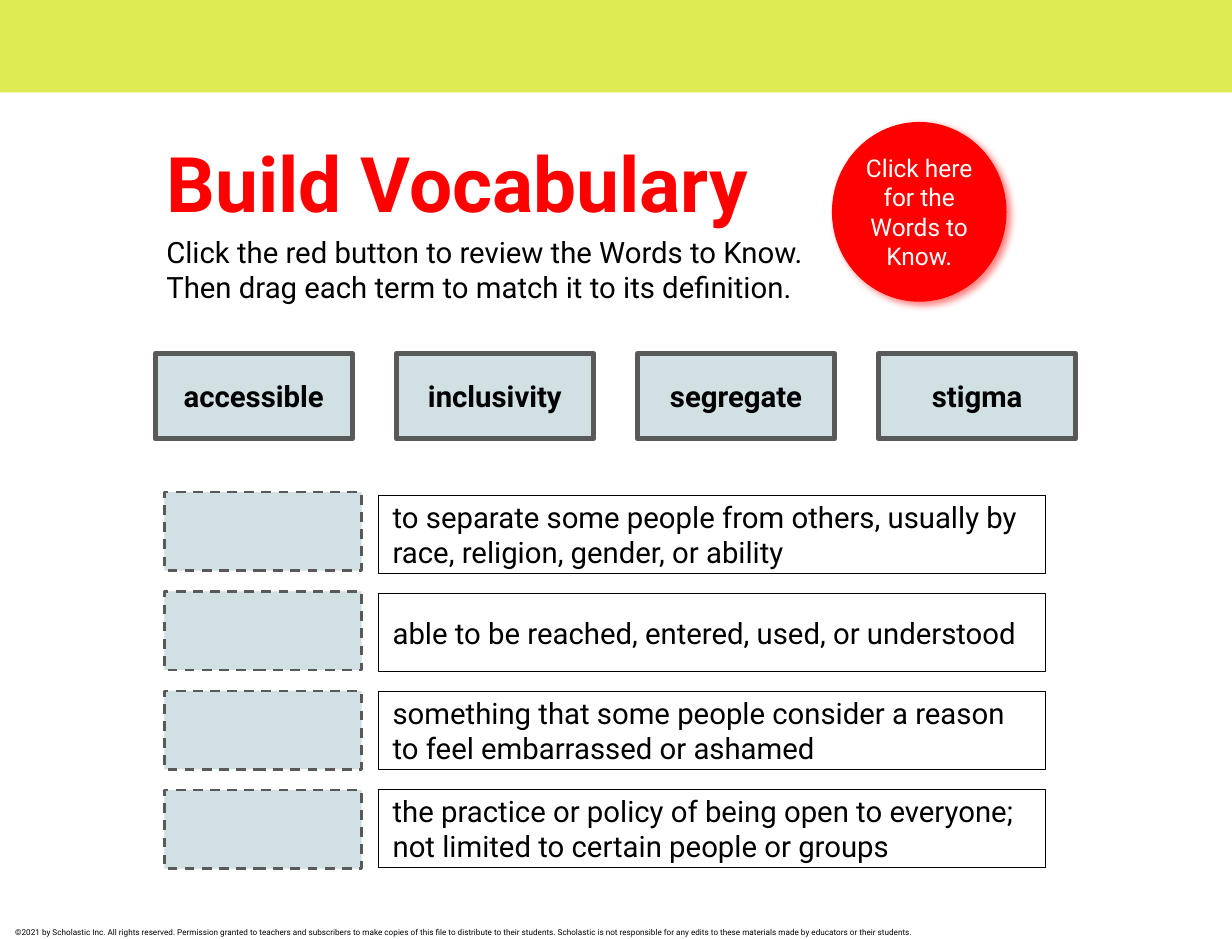
from lxml.etree import SubElement
from pptx import Presentation
from pptx.dml.color import RGBColor
from pptx.enum.dml import MSO_LINE
from pptx.enum.shapes import MSO_SHAPE
from pptx.enum.text import MSO_ANCHOR, MSO_AUTO_SIZE, PP_ALIGN
from pptx.oxml.ns import qn
from pptx.util import Cm, Pt

LIME = RGBColor(0xDE, 0xEB, 0x52)
RED = RGBColor(0xFF, 0x00, 0x00)
BLACK = RGBColor(0x00, 0x00, 0x00)
WHITE = RGBColor(0xFF, 0xFF, 0xFF)
PALE_BLUE = RGBColor(0xD0, 0xE0, 0xE3)
GRAY = RGBColor(0x59, 0x59, 0x59)
FONT = "Roboto"

TERMS = ["accessible", "inclusivity", "segregate", "stigma"]
DEFINITIONS = [
    "to separate some people from others, usually by race, religion, gender, or ability",
    "able to be reached, entered, used, or understood",
    "something that some people consider a reason to feel embarrassed or ashamed",
    "the practice or policy of being open to everyone; not limited to certain people or groups",
]
COPYRIGHT = (
    "©2021 by Scholastic Inc. All rights reserved. Permission granted to teachers "
    "and subscribers to make copies of this file to distribute to their students. "
    "Scholastic is not responsible for any edits to these materials made by "
    "educators or their students."
)


def set_text(sp, text, size, color=BLACK, bold=False, align=PP_ALIGN.LEFT,
             anchor=MSO_ANCHOR.MIDDLE, inset=0.3):
    tf = sp.text_frame
    tf.word_wrap = True
    tf.auto_size = MSO_AUTO_SIZE.NONE
    tf.vertical_anchor = anchor
    tf.margin_left = tf.margin_right = tf.margin_top = tf.margin_bottom = Cm(inset)
    p = tf.paragraphs[0]
    p.text = text
    p.alignment = align
    p.space_before = Pt(0)
    for r in p.runs:
        r.font.name = FONT
        r.font.size = Pt(size)
        r.font.bold = bold
        r.font.color.rgb = color
    return p


def place(sp, left, top, width, height):
    sp.left, sp.top, sp.width, sp.height = Cm(left), Cm(top), Cm(width), Cm(height)


def add_box(s, left, top, width, height, fill=None, line=None, weight=1,
            dash=None, kind=MSO_SHAPE.RECTANGLE):
    sp = s.shapes.add_shape(kind, Cm(left), Cm(top), Cm(width), Cm(height))
    sp.shadow.inherit = False
    if fill is None:
        sp.fill.background()
    else:
        sp.fill.solid()
        sp.fill.fore_color.rgb = fill
    if line is None:
        sp.line.fill.background()
    else:
        sp.line.color.rgb = line
        sp.line.width = Pt(weight)
        if dash:
            sp.line.dash_style = dash
    return sp


def add_glow_shadow(sp, color):
    effects = sp._element.spPr.find(qn("a:effectLst"))
    shadow = SubElement(effects, qn("a:outerShdw"), blurRad=str(Pt(4.5)),
                        dist=str(Pt(3)), dir=str(43 * 60000),
                        algn="bl", rotWithShape="0")
    clr = SubElement(shadow, qn("a:srgbClr"), val=str(color))
    SubElement(clr, qn("a:alpha"), val="50000")


def add_heading(s):
    title, body = s.shapes.title, s.placeholders[1]
    place(title, 3.3, 2.64, 13.92, 2.26)
    set_text(title, "Build Vocabulary", 47, RED, bold=True, anchor=MSO_ANCHOR.TOP)
    place(body, 3.3, 4.7, 15.85, 2.26)
    p = set_text(body, "Click the red button to review the Words to Know.\n"
                       "Then drag each term to match it to its definition.", 18)
    pPr = p._p.get_or_add_pPr()
    pPr.set("marL", "0")
    pPr.set("indent", "0")
    SubElement(pPr, qn("a:buNone"))


def add_button(s):
    sp = add_box(s, 18.01, 2.64, 3.78, 3.89, RED, kind=MSO_SHAPE.OVAL)
    add_glow_shadow(sp, RED)
    set_text(sp, "Click here for the Words to Know.", 15, WHITE,
             align=PP_ALIGN.CENTER, inset=0)


def add_terms(s):
    for i, term in enumerate(TERMS):
        sp = add_box(s, 3.36 + 5.22 * i, 7.65, 4.27, 1.85, PALE_BLUE, GRAY, 3)
        set_text(sp, term, 18, bold=True, align=PP_ALIGN.CENTER, inset=0.25)


def add_definitions(s):
    for i, definition in enumerate(DEFINITIONS):
        sp = add_box(s, 8.2, 10.72 + 2.12 * i, 14.43, 1.7, line=BLACK, weight=0.75)
        set_text(sp, definition, 18)
        add_box(s, 3.56, 10.65 + 2.15 * i, 4.27, 1.7, PALE_BLUE, GRAY, 1.5,
                MSO_LINE.DASH)


def add_copyright(s):
    sp = s.shapes.add_textbox(Cm(0.33), Cm(20.07), Cm(22.28), Cm(0.25))
    set_text(sp, COPYRIGHT, 5, anchor=MSO_ANCHOR.TOP, inset=0)


def main():
    prs = Presentation()
    prs.slide_width, prs.slide_height = Cm(26.67), Cm(20.32)
    s = prs.slides.add_slide(prs.slide_layouts[1])
    add_box(s, 0, -0.03, 26.67, 2.03, LIME)
    add_copyright(s)
    add_heading(s)
    add_definitions(s)
    add_button(s)
    add_terms(s)
    prs.save("out.pptx")


if __name__ == "__main__":
    main()
